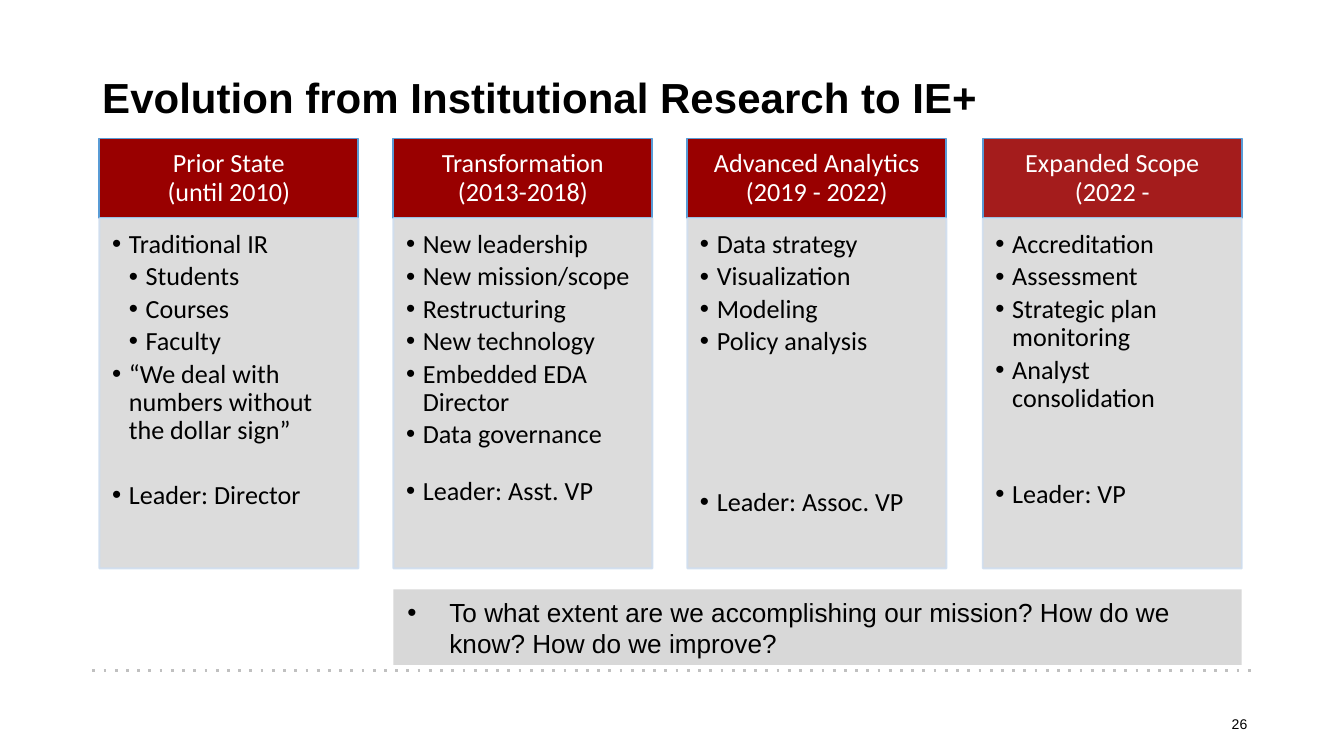
"""Build the slide on the growth of institutional research."""
import dataclasses

import pptx
import pptx.dml.color
import pptx.enum.shapes
import pptx.enum.text
import pptx.oxml.ns
import pptx.util
from lxml import etree

PX = 9525
ALIGN = pptx.enum.text.PP_ALIGN
ANCHOR = pptx.enum.text.MSO_ANCHOR
qn = pptx.oxml.ns.qn


@dataclasses.dataclass(frozen=True)
class Theme:
    black: str = "000000"
    white: str = "FFFFFF"
    red: str = "990000"
    gray: str = "D8D8D8"
    blue: str = "599BD5"
    pale: str = "CFDEEF"
    rule: str = "C0C0C0"
    sans: str = "Arial"
    body: str = "Calibri"
    head: float = 22.5
    main: float = 14
    small: float = 7.5
    alpha: int = 89


def px(count):
    return pptx.util.Emu(count * PX)


def rgb(code):
    return pptx.dml.color.RGBColor.from_string(code)


def veil(root, share):
    for tone in root.iter(qn("a:srgbClr")):
        etree.SubElement(tone, qn("a:alpha"), val=str(share * 1000))


def write(par, text, *, face, size, hue, bold=False, align=ALIGN.LEFT,
          lead=1.0, before=0, left=0, hang=0):
    par.text = text
    par.alignment = align
    par.line_spacing = lead
    par.space_before = pptx.util.Pt(before)
    if hang:
        props = par._p.get_or_add_pPr()
        props.set("marL", str(px(left)))
        props.set("indent", str(px(-hang)))
        etree.SubElement(props, qn("a:buFont"), typeface="Arial")
        etree.SubElement(props, qn("a:buChar"), char="•")
    for run in par.runs:
        run.font.name = face
        run.font.size = pptx.util.Pt(size)
        run.font.bold = bold
        run.font.color.rgb = rgb(hue)


class Deck:
    def __init__(self, theme):
        self.theme = theme
        self.show = pptx.Presentation()
        self.show.slide_width, self.show.slide_height = px(960), px(540)
        self.slide = self.show.slides.add_slide(self.show.slide_layouts[6])

    def frame(self, shape, pads=(10, 5, 10, 5), anchor=ANCHOR.TOP):
        frame = shape.text_frame
        frame.word_wrap = True
        frame.vertical_anchor = anchor
        (frame.margin_left, frame.margin_top,
         frame.margin_right, frame.margin_bottom) = map(px, pads)
        return frame

    def label(self, area, text, **style):
        box = self.slide.shapes.add_textbox(*map(px, area))
        write(self.frame(box).paragraphs[0], text, face=self.theme.sans,
              hue=self.theme.black, **style)

    def rect(self, area, fill, edge=None):
        kind = pptx.enum.shapes.MSO_SHAPE.RECTANGLE
        shape = self.slide.shapes.add_shape(kind, *map(px, area))
        shape.shadow.inherit = False
        shape.fill.solid()
        shape.fill.fore_color.rgb = rgb(fill)
        if edge:
            shape.line.color.rgb = rgb(edge)
            shape.line.width = pptx.util.Pt(1)
        else:
            shape.line.fill.background()
        return shape

    def header(self, area, text, faded):
        look = self.theme
        shape = self.rect(area, look.red, look.blue)
        if faded:
            veil(shape.element.spPr.find(qn("a:solidFill")), look.alpha)
        frame = self.frame(shape, (11, 7, 11, 7), ANCHOR.MIDDLE)
        write(frame.paragraphs[0], text, face=look.body, size=look.main,
              hue=look.white, align=ALIGN.CENTER, lead=0.9)

    def panel(self, area, items, leader, gap):
        look = self.theme
        shape = self.rect(area, look.gray, look.pale)
        veil(shape.element.spPr, look.alpha)
        frame = self.frame(shape, (9, 9, 11, 12))
        rows = [(text, level, 2.2) for text, level in items]
        rows.append(("Leader: " + leader, 1, gap))
        for spot, (text, level, before) in enumerate(rows):
            par = frame.add_paragraph() if spot else frame.paragraphs[0]
            write(par, text, face=look.body, size=look.main, hue=look.black,
                  lead=0.9, before=before if spot else 0,
                  left=level * 12, hang=12)

    def banner(self, area, text):
        look = self.theme
        frame = self.frame(self.rect(area, look.gray))
        write(frame.paragraphs[0], text, face=look.sans, size=look.main,
              hue=look.black, left=30, hang=30)

    def rule(self, start, end, top):
        kind = pptx.enum.shapes.MSO_CONNECTOR.STRAIGHT
        line = self.slide.shapes.add_connector(
            kind, px(start), px(top), px(end), px(top))
        line.line.color.rgb = rgb(self.theme.rule)
        line.line.width = pptx.util.Pt(1.5)
        props = line.element.spPr
        etree.SubElement(props.find(qn("a:ln")), qn("a:prstDash"), val="dot")
        etree.SubElement(props, qn("a:effectLst"))


def flat(*texts):
    return [(text, 1) for text in texts]


STAGES = [
    ("Prior State\n(until 2010)",
     [("Traditional IR", 1), ("Students", 2), ("Courses", 2), ("Faculty", 2),
      ("“We deal with numbers without the dollar sign”", 1)],
     "Director", 19.5),
    ("Transformation (2013-2018)",
     flat("New leadership", "New mission/scope", "Restructuring",
          "New technology", "Embedded EDA Director", "Data governance"),
     "Asst. VP", 15),
    ("Advanced Analytics\n(2019 - 2022)",
     flat("Data strategy", "Visualization", "Modeling", "Policy analysis"),
     "Assoc. VP", 71),
    ("Expanded Scope\n(2022 -",
     flat("Accreditation", "Assessment", "Strategic plan monitoring",
          "Analyst consolidation"),
     "VP", 36.5),
]


def main():
    look = Theme()
    deck = Deck(look)
    deck.rule(66, 895, 479)
    deck.label((63, 53, 839, 64), "Evolution from Institutional Research to IE+",
               size=look.head, bold=True, lead=0.8)
    deck.label((685, 506, 216, 29), "26", size=look.small, align=ALIGN.RIGHT)
    for spot, (name, items, leader, gap) in enumerate(STAGES):
        left = 71 + spot * 631 // 3
        deck.header((left, 99, 185, 57), name, spot == len(STAGES) - 1)
        deck.panel((left, 156, 185, 250), items, leader, gap)
    deck.banner((281, 421, 606, 54),
                "To what extent are we accomplishing our mission? "
                "How do we know? How do we improve?")
    deck.show.save("out.pptx")


if __name__ == "__main__":
    main()
